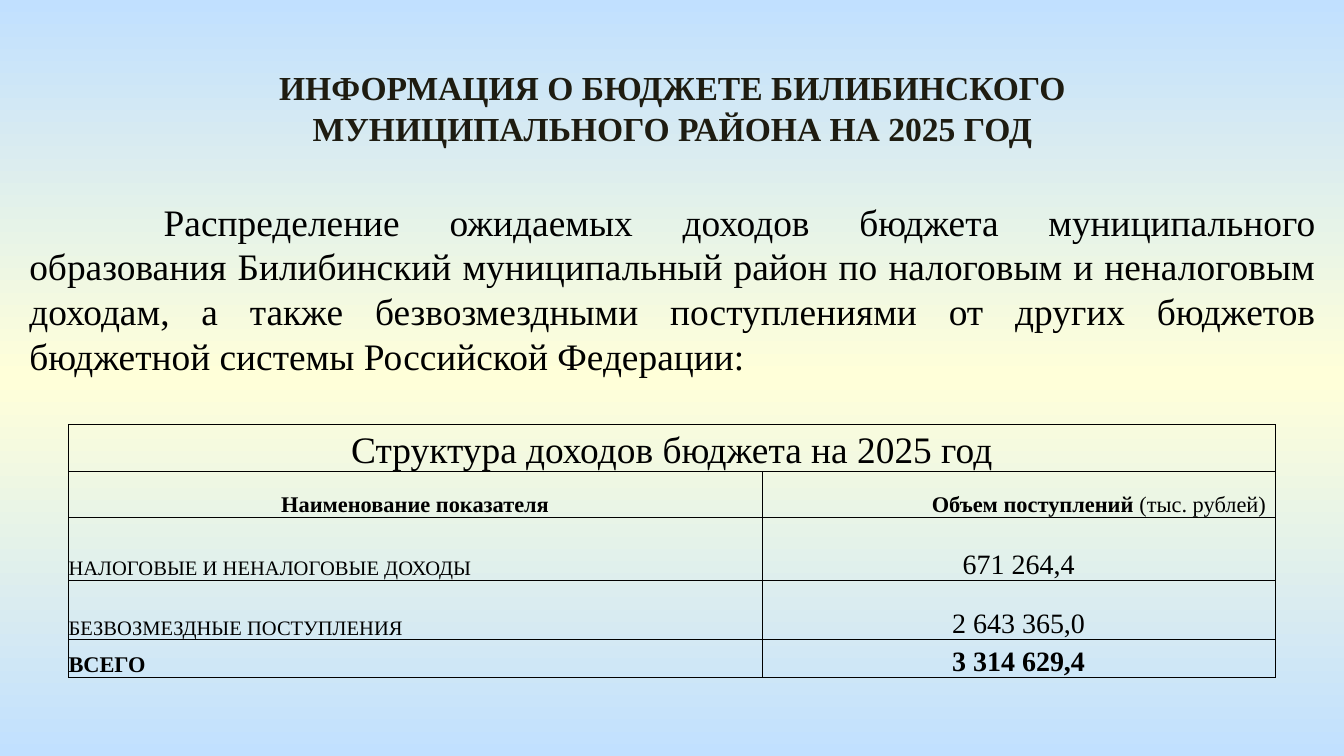
"""Build a slide on the expected income of a district budget for 2025."""
from copy import deepcopy

from lxml import etree
from pptx import Presentation
from pptx.dml.color import RGBColor
from pptx.enum.shapes import MSO_SHAPE
from pptx.enum.text import MSO_ANCHOR, PP_ALIGN
from pptx.oxml.ns import qn
from pptx.util import Inches, Pt

LEFT, CENTER, RIGHT, JUSTIFY = PP_ALIGN.LEFT, PP_ALIGN.CENTER, PP_ALIGN.RIGHT, PP_ALIGN.JUSTIFY
TOP, BOTTOM = MSO_ANCHOR.TOP, MSO_ANCHOR.BOTTOM
RECTANGLE = MSO_SHAPE.RECTANGLE
BLACK = RGBColor(0x00, 0x00, 0x00)
TITLE_COLOR = RGBColor(0x1E, 0x1C, 0x11)
SKY = RGBColor(0xC1, 0xE0, 0xFF)
CREAM = RGBColor(0xFF, 0xFF, 0xD9)
FONT = "Times New Roman"
BORDER_WIDTH = Pt(0.5)
SLIDE_WIDTH = Inches(10)
SLIDE_HEIGHT = SLIDE_WIDTH * 9 // 16

TITLE = "ИНФОРМАЦИЯ О БЮДЖЕТЕ БИЛИБИНСКОГО МУНИЦИПАЛЬНОГО РАЙОНА НА 2025 ГОД"
TITLE_PLACE = (1.14, 0.45, 7.73, 0.71)
INTRODUCTION = (
    "Распределение ожидаемых доходов бюджета муниципального образования "
    "Билибинский муниципальный район по налоговым и неналоговым доходам, "
    "а также безвозмездными поступлениями от других бюджетов бюджетной "
    "системы Российской Федерации:"
)
INTRODUCTION_PLACE = (0.12, 1.43, 9.77, 1.45)
FIRST_LINE_INDENT = Inches(1)

TABLE_LEFT, TABLE_TOP = 0.51, 3.16
COLUMN_WIDTHS = [5.16, 3.82]
ROW_HEIGHTS = [0.35, 0.34, 0.47, 0.44, 0.28]
TABLE_ROWS = [
    [([("Структура доходов бюджета на 2025 год", False)], 20, CENTER)],
    [([("Наименование показателя", True)], 12, CENTER),
     ([("Объем поступлений ", True), ("(тыс. рублей)", False)], 12, RIGHT)],
    [([("НАЛОГОВЫЕ И НЕНАЛОГОВЫЕ ДОХОДЫ", False)], 11, LEFT),
     ([("671 264,4", False)], 15, CENTER)],
    [([("БЕЗВОЗМЕЗДНЫЕ ПОСТУПЛЕНИЯ", False)], 11, LEFT),
     ([("2 643 365,0", False)], 15, CENTER)],
    [([("ВСЕГО", True)], 12, LEFT), ([("3 314 629,4", True)], 15, CENTER)],
]


def apply(target, values):
    for name, value in values.items():
        setattr(target, name, value)


def write(text_frame, runs, size, alignment, color=BLACK):
    paragraph = text_frame.paragraphs[0]
    paragraph.alignment = alignment
    for text, bold in runs:
        run = paragraph.add_run()
        run.text = text
        apply(run.font, {"name": FONT, "size": Pt(size), "bold": bold})
        run.font.color.rgb = color
    return paragraph


def paint_background(slide):
    fill = slide.background.fill
    fill.gradient()
    fill.gradient_angle = 90
    stop_list = slide.element.xpath(".//a:gsLst")[0]
    stop_list.append(deepcopy(stop_list[-1]))
    for stop, color, position in zip(fill.gradient_stops, (SKY, CREAM, SKY), (0, 0.5, 1)):
        stop.color.rgb = color
        stop.position = position


def add_borders(cell):
    properties = cell._tc.get_or_add_tcPr()
    for side in ("a:lnL", "a:lnR", "a:lnT", "a:lnB"):
        line = etree.SubElement(properties, qn(side), w=str(BORDER_WIDTH))
        solid = etree.SubElement(line, qn("a:solidFill"))
        etree.SubElement(solid, qn("a:srgbClr"), val=str(BLACK))


def add_title(slide):
    box = slide.shapes.add_textbox(*map(Inches, TITLE_PLACE))
    box.text_frame.word_wrap = True
    write(box.text_frame, [(TITLE, True)], 18, CENTER, TITLE_COLOR)


def add_introduction(slide):
    shape = slide.shapes.add_shape(RECTANGLE, *map(Inches, INTRODUCTION_PLACE))
    shape.shadow.inherit = False
    shape.line.fill.background()
    shape.element.remove(shape.element.xpath("p:style")[0])
    shape.element.set("useBgFill", "1")
    apply(shape.text_frame, {"word_wrap": True, "vertical_anchor": TOP})
    paragraph = write(shape.text_frame, [(INTRODUCTION, False)], 20, JUSTIFY)
    paragraph._p.get_or_add_pPr().set("indent", str(FIRST_LINE_INDENT))


def add_income_table(slide):
    place = (TABLE_LEFT, TABLE_TOP, sum(COLUMN_WIDTHS), sum(ROW_HEIGHTS))
    table = slide.shapes.add_table(
        len(ROW_HEIGHTS), len(COLUMN_WIDTHS), *map(Inches, place)).table
    apply(table, {"first_row": False, "horz_banding": False})
    for column, width in zip(table.columns, COLUMN_WIDTHS):
        column.width = Inches(width)
    for row, height in zip(table.rows, ROW_HEIGHTS):
        row.height = Inches(height)
    table.cell(0, 0).merge(table.cell(0, 1))
    for cell in table.iter_cells():
        add_borders(cell)
        cell.fill.background()
    for row, contents in zip(table.rows, TABLE_ROWS):
        for cell, (runs, size, alignment) in zip(row.cells, contents):
            side_margin = Inches(0.07 if alignment == RIGHT else 0)
            apply(cell, {"vertical_anchor": BOTTOM, "margin_top": 0, "margin_bottom": 0,
                         "margin_left": side_margin, "margin_right": side_margin})
            write(cell.text_frame, runs, size, alignment)


def main():
    presentation = Presentation()
    apply(presentation, {"slide_width": SLIDE_WIDTH, "slide_height": SLIDE_HEIGHT})
    slide = presentation.slides.add_slide(presentation.slide_layouts[6])
    paint_background(slide)
    add_introduction(slide)
    add_title(slide)
    add_income_table(slide)
    presentation.save("out.pptx")


if __name__ == "__main__":
    main()
